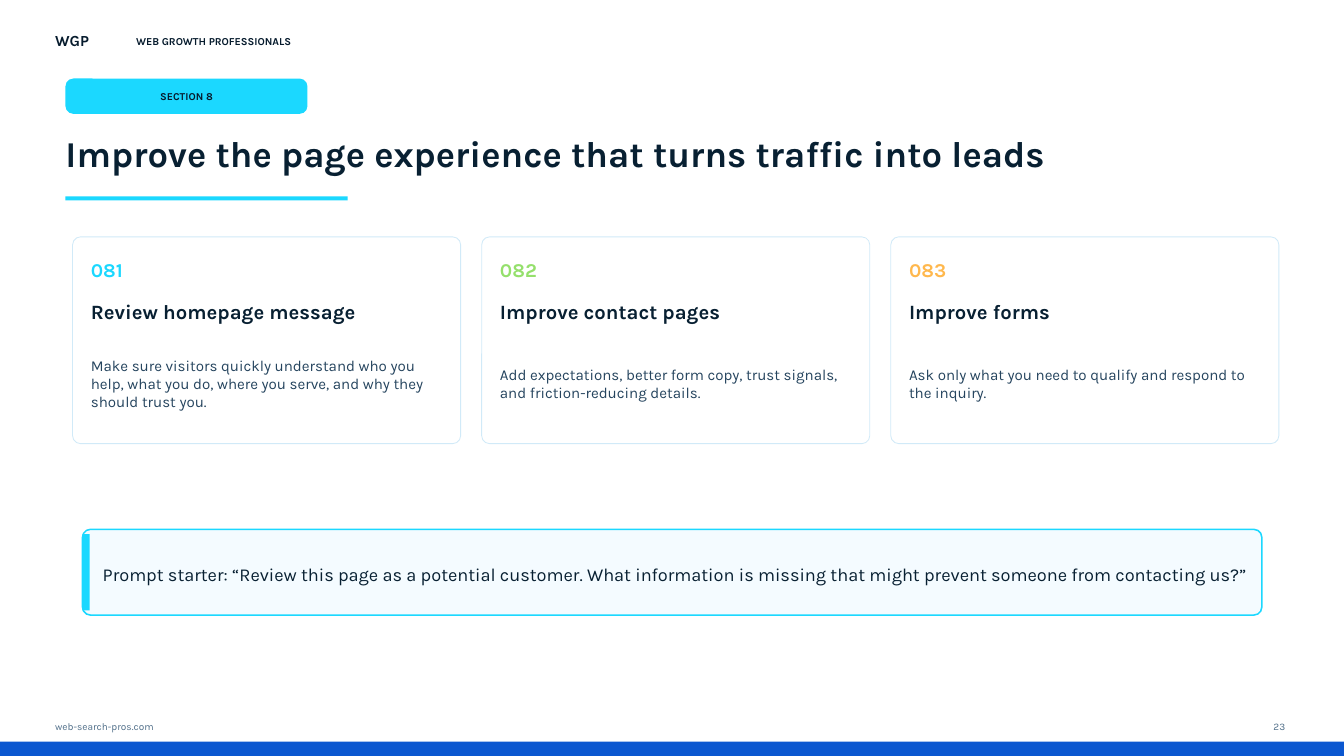
from pptx import Presentation
from pptx.dml.color import RGBColor
from pptx.enum.shapes import MSO_SHAPE as SHAPE
from pptx.enum.text import MSO_ANCHOR as ANCHOR, MSO_AUTO_SIZE as AUTOSIZE, PP_ALIGN as ALIGN
from pptx.util import Cm, Pt

# Content
BRAND_SHORT = "WGP"
BRAND_NAME = "WEB GROWTH PROFESSIONALS"
SECTION = "SECTION 8"
TITLE = "Improve the page experience that turns traffic into leads"
CARDS = [
    ("081", "Review homepage message",
     "Make sure visitors quickly understand who you help, what you do, "
     "where you serve, and why they should trust you."),
    ("082", "Improve contact pages",
     "Add expectations, better form copy, trust signals, and friction-reducing details."),
    ("083", "Improve forms",
     "Ask only what you need to qualify and respond to the inquiry."),
]
PROMPT = ("Prompt starter: “Review this page as a potential customer. What information "
          "is missing that might prevent someone from contacting us?”")
SITE = "web-search-pros.com"
PAGE = "23"


class Theme:
    font = "Karla"
    # Colours
    white, pale, border = "FFFFFF", "F4FBFF", "D1EAF8"
    cyan, blue = "1BD8FF", "0B57D0"
    ink, title, body, muted = "061B2D", "082032", "25445E", "52708A"
    accents = (cyan, "95E06C", "FFB84D")
    # Type sizes
    brand, brand_name, section, heading = 11, 7.6, 7.5, 26
    number, card_title, card_body, prompt, footer = 14, 14.5, 10.8, 13, 7.2


# Slide measures in centimetres
WIDTH, HEIGHT = 33.87, 19.05
LEFT = 1.65
INSET = 0.25
BAR_H = 0.36
CARD_X, CARD_Y, CARD_W, CARD_H = 1.83, 5.97, 9.78, 5.21
CARD_PITCH, CARD_PAD = 10.31, 0.46
PROMPT_X, PROMPT_Y, PROMPT_W, PROMPT_H = 2.08, 13.34, 29.72, 2.16


def rgb(color):
    return RGBColor.from_string(color)


def add_panel(slide, x, y, w, h, fill, radius=0, line=None, line_w=0):
    """Filled rectangle, rounded when a corner radius in cm is given."""
    kind = SHAPE.ROUNDED_RECTANGLE if radius else SHAPE.RECTANGLE
    sp = slide.shapes.add_shape(kind, Cm(x), Cm(y), Cm(w), Cm(h))
    sp.shadow.inherit = False
    if radius:
        sp.adjustments[0] = radius / min(w, h)
    sp.fill.solid()
    sp.fill.fore_color.rgb = rgb(fill)
    if line:
        sp.line.color.rgb = rgb(line)
        sp.line.width = Pt(line_w)
    else:
        sp.line.fill.background()


def set_text(sp, text, size, color, bold=False, align=ALIGN.LEFT, inset=0):
    tf = sp.text_frame
    tf.text = text
    tf.word_wrap = True
    tf.auto_size = AUTOSIZE.NONE
    tf.vertical_anchor = ANCHOR.MIDDLE
    tf.margin_left = tf.margin_right = Cm(inset)
    tf.margin_top = tf.margin_bottom = Cm(0)
    p = tf.paragraphs[0]
    p.alignment = align
    font = p.runs[0].font
    font.name, font.size, font.bold = Theme.font, Pt(size), bold
    font.color.rgb = rgb(color)


def add_text(slide, x, y, w, h, *args, **style):
    set_text(slide.shapes.add_textbox(Cm(x), Cm(y), Cm(w), Cm(h)), *args, **style)


def add_header(slide):
    add_text(slide, 1.14, 0.71, 1.73, 0.64, BRAND_SHORT, Theme.brand, Theme.ink,
             bold=True, inset=INSET)
    add_text(slide, 3.18, 0.71, 8.13, 0.64, BRAND_NAME, Theme.brand_name, Theme.ink,
             bold=True, inset=INSET)
    # Section tag
    add_panel(slide, LEFT, 1.98, 6.1, 0.89, Theme.cyan, radius=0.2)
    add_text(slide, LEFT + 0.3, 2.24, 5.5, 0.38, SECTION, Theme.section, Theme.ink,
             bold=True, align=ALIGN.CENTER)
    # Title and its underline
    sp = slide.shapes.title
    sp.left, sp.top, sp.width, sp.height = Cm(LEFT), Cm(3.12), Cm(30.48), Cm(1.47)
    set_text(sp, TITLE, Theme.heading, Theme.title, bold=True)
    add_panel(slide, LEFT, 4.95, 7.11, 0.1, Theme.cyan)


def add_cards(slide):
    for i, ((number, name, body), accent) in enumerate(zip(CARDS, Theme.accents)):
        x = CARD_X + i * CARD_PITCH
        text_x, text_w = x + CARD_PAD, CARD_W - 2 * CARD_PAD
        add_panel(slide, x, CARD_Y, CARD_W, CARD_H, Theme.white,
                  radius=0.2, line=Theme.border, line_w=0.6)
        add_text(slide, text_x, CARD_Y + CARD_PAD, 1.83, 0.71,
                 number, Theme.number, accent, bold=True)
        add_text(slide, text_x, CARD_Y + 1.35, text_w, 1.07,
                 name, Theme.card_title, Theme.title, bold=True)
        add_text(slide, text_x, CARD_Y + 2.59, text_w, 2.21,
                 body, Theme.card_body, Theme.body)


def add_prompt(slide):
    add_panel(slide, PROMPT_X, PROMPT_Y, PROMPT_W, PROMPT_H, Theme.pale,
              radius=0.2, line=Theme.cyan, line_w=1.1)
    add_panel(slide, PROMPT_X, PROMPT_Y + 0.12, 0.18, PROMPT_H - 0.24, Theme.cyan)
    add_text(slide, PROMPT_X + 0.51, PROMPT_Y + 0.36, 29, 1.52,
             PROMPT, Theme.prompt, Theme.title)


def add_footer(slide):
    add_text(slide, 1.14, 18.08, 6.35, 0.46, SITE, Theme.footer, Theme.muted, inset=INSET)
    add_text(slide, 31.37, 18.08, 1.27, 0.46, PAGE, Theme.footer, Theme.muted,
             align=ALIGN.RIGHT, inset=INSET)


def main():
    prs = Presentation()
    prs.slide_width, prs.slide_height = Cm(WIDTH), Cm(HEIGHT)
    slide = prs.slides.add_slide(prs.slide_layouts[5])
    slide.background.fill.solid()
    slide.background.fill.fore_color.rgb = rgb(Theme.white)
    add_panel(slide, 0, HEIGHT - BAR_H, WIDTH, BAR_H, Theme.blue)
    add_header(slide)
    add_cards(slide)
    add_prompt(slide)
    add_footer(slide)
    prs.save("out.pptx")


if __name__ == "__main__":
    main()
